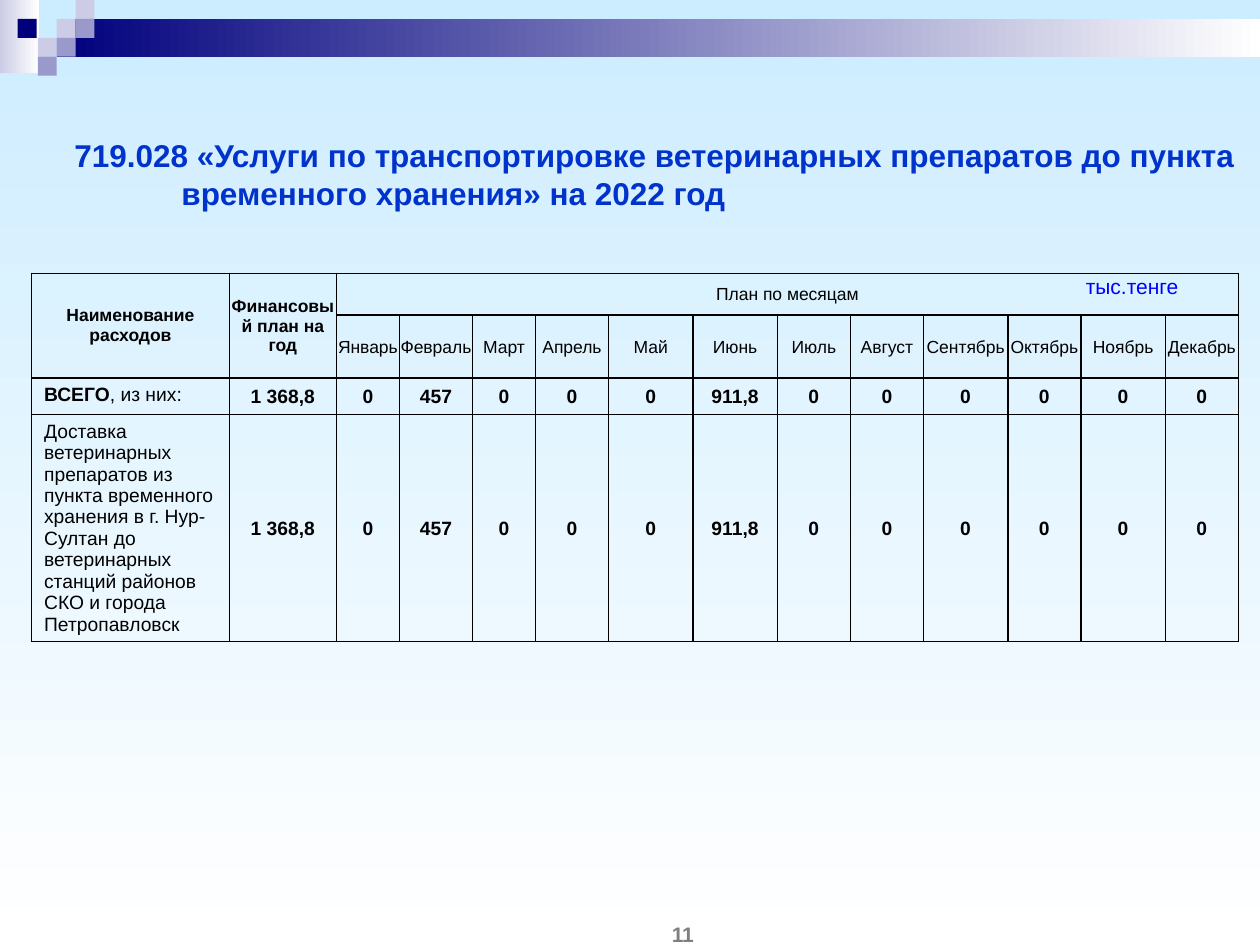
import pptx
import pptx.util
import pptx.dml.color
import pptx.enum.shapes
import pptx.enum.text
import pptx.oxml
import pptx.oxml.ns

Inches, Pt = pptx.util.Inches, pptx.util.Pt
ALIGN = pptx.enum.text.PP_ALIGN
ANCHOR = pptx.enum.text.MSO_ANCHOR
COLORS = {
    "sky": "CCECFF", "white": "FFFFFF", "lavender": "CCCCE6", "lilac": "9999CC",
    "navy": "00007D", "title": "0033CC", "unit": "0000FF", "number": "7F7F7F",
    "black": "000000",
}


def color(name):
    return pptx.dml.color.RGBColor.from_string(COLORS[name])


def write(paragraph, text, size, color_name, bold=False, align=ALIGN.CENTER):
    """Append a formatted run to the paragraph."""
    paragraph.alignment = align
    run = paragraph.add_run()
    run.text = text
    for key, value in {"name": "Arial", "size": Pt(size), "bold": bold}.items():
        setattr(run.font, key, value)
    run.font.color.rgb = color(color_name)


prs = pptx.Presentation()
prs.slide_width, prs.slide_height = Inches(10), Inches(7.5)
slide = prs.slides.add_slide(prs.slide_layouts[5])

# Background and header ornament: two gradient bars, then squares
fills = [(slide.background.fill, "sky", 270)]
ornament = [
    (0, 0, 0.31, 0.58, "lavender", True),
    (0.45, 0.15, 9.55, 0.3, "navy", True),
]
ornament += [(left, top, 0.15, 0.15, name, False) for left, top, name in [
    (0.45, 0.15, "lavender"), (0.6, 0, "lavender"), (0.6, 0.15, "lilac"),
    (0.3, 0.3, "lavender"), (0.14, 0.15, "navy"), (0.45, 0.3, "lilac"),
    (0.3, 0.45, "lilac"),
]]
for left, top, width, height, name, fades in ornament:
    block = slide.shapes.add_shape(
        pptx.enum.shapes.MSO_SHAPE.RECTANGLE,
        Inches(left), Inches(top), Inches(width), Inches(height))
    block.shadow.inherit = False
    block.line.fill.background()
    if fades:
        fills.append((block.fill, name, 0))
    else:
        block.fill.solid()
        block.fill.fore_color.rgb = color(name)
for fill, start, angle in fills:
    fill.gradient()
    fill.gradient_angle = angle
    for stop, name in zip(fill.gradient_stops, (start, "white")):
        stop.color.rgb = color(name)

# Title with a hanging first line
title = slide.shapes.title
title.left, title.top = Inches(0.38), Inches(1.25)
title.width, title.height = Inches(9.62), Inches(0.26)
for key, value in {"vertical_anchor": ANCHOR.MIDDLE, "word_wrap": True,
                   "auto_size": pptx.enum.text.MSO_AUTO_SIZE.NONE}.items():
    setattr(title.text_frame, key, value)
heading = title.text_frame.paragraphs[0]
write(heading, "719.028 «Услуги по транспортировке ветеринарных препаратов до пункта "
      "временного хранения» на 2022 год", 18, "title", True, ALIGN.LEFT)
indents = heading._p.get_or_add_pPr()
indents.set("marL", str(Inches(0.96)))
indents.set("indent", str(Inches(-0.85)))

# Budget table
months = ["Январь", "Февраль", "Март", "Апрель", "Май", "Июнь", "Июль", "Август",
          "Сентябрь", "Октябрь", "Ноябрь", "Декабрь"]
amounts = ["1 368,8", "0", "457", "0", "0", "0", "911,8"] + ["0"] * 6
delivery = ("Доставка ветеринарных препаратов из пункта временного хранения "
            "в г. Нур-Султан до ветеринарных станций районов СКО и города Петропавловск")
rows = [
    ["Наименование расходов", "Финансовый план на год", "План по месяцам"] + [""] * 11,
    ["", ""] + months,
    ["ВСЕГО"] + amounts,
    [delivery] + amounts,
]
column_widths = [1.57, 0.85, 0.5, 0.58, 0.5, 0.58, 0.67, 0.67, 0.58, 0.58, 0.67,
                 0.58, 0.67, 0.58]
row_heights = [0.33, 0.5, 0.29, 1.8]
table = slide.shapes.add_table(
    len(rows), len(column_widths), Inches(0.25), Inches(2.17),
    Inches(sum(column_widths)), Inches(sum(row_heights))).table
table.first_row = table.horz_banding = False
for column, width in zip(table.columns, column_widths):
    column.width = Inches(width)
for row, height in zip(table.rows, row_heights):
    row.height = Inches(height)

for r, texts in enumerate(rows):
    for c, text in enumerate(texts):
        cell = table.cell(r, c)
        is_label = c == 0
        is_data = r >= 2
        # Month names need the full column width to stay on one line
        side_margin = 0 if r == 1 else 0.01
        margins = (0.1, 0.05, 0.1, 0.05) if is_label else (side_margin, 0.01, side_margin, 0)
        for side, margin in zip(("left", "top", "right", "bottom"), margins):
            setattr(cell, f"margin_{side}", Inches(margin))
        cell.vertical_anchor = ANCHOR.TOP if is_label and is_data else ANCHOR.MIDDLE
        for edge in ("lnL", "lnR", "lnT", "lnB"):
            cell._tc.get_or_add_tcPr().append(pptx.oxml.parse_xml(
                f'<a:{edge} {pptx.oxml.ns.nsdecls("a")} w="{Pt(1)}"><a:solidFill>'
                f'<a:srgbClr val="{COLORS["black"]}"/></a:solidFill></a:{edge}>'))
        cell.fill.background()
        if text:
            bold = (is_data and text != delivery) or (r == 0 and c < 2)
            write(cell.text_frame.paragraphs[0], text, 11 if is_data else 10, "black",
                  bold, ALIGN.LEFT if is_label and is_data else ALIGN.CENTER)
write(table.cell(2, 0).text_frame.paragraphs[0], ", из них:", 11, "black",
      align=ALIGN.LEFT)
for first, last in [((0, 0), (1, 0)), ((0, 1), (1, 1)), ((0, 2), (0, 13))]:
    table.cell(*first).merge(table.cell(*last))

# Unit of measure and page number
for text, left, top, width, height, name, bold, anchor in [
    ("тыс.тенге", 8.16, 2.17, 1.65, 0.2, "unit", False, ANCHOR.TOP),
    ("11", 4.42, 7.32, 2, 0.18, "number", True, ANCHOR.MIDDLE),
]:
    frame = slide.shapes.add_textbox(
        Inches(left), Inches(top), Inches(width), Inches(height)).text_frame
    for key, value in {"word_wrap": True, "vertical_anchor": anchor, "margin_left": 0,
                       "margin_top": 0, "margin_right": 0, "margin_bottom": 0}.items():
        setattr(frame, key, value)
    write(frame.paragraphs[0], text, 12, name, bold)

prs.save("out.pptx")
